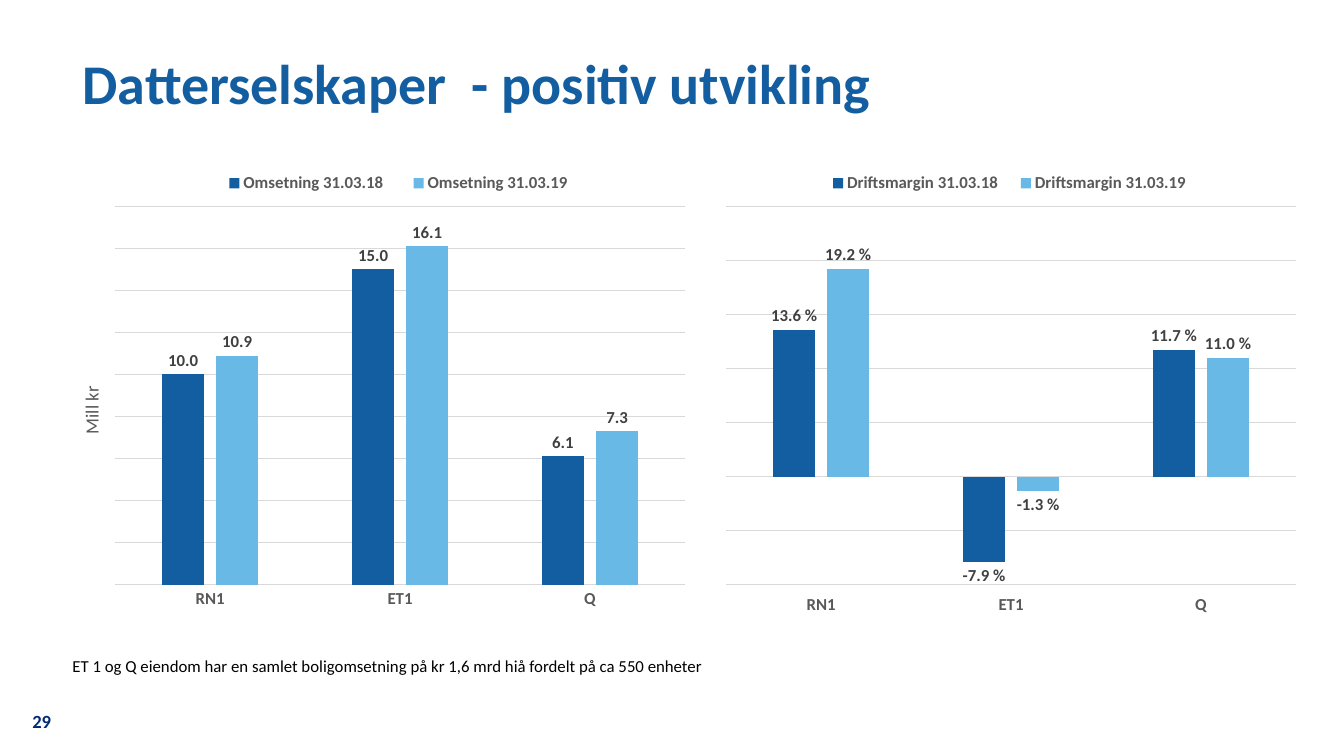
from dataclasses import dataclass

from lxml.etree import SubElement
from pptx import Presentation
from pptx.chart.data import CategoryChartData
from pptx.dml.color import RGBColor
from pptx.enum.chart import (XL_CHART_TYPE, XL_LABEL_POSITION, XL_LEGEND_POSITION,
                             XL_TICK_LABEL_POSITION, XL_TICK_MARK)
from pptx.enum.text import MSO_ANCHOR, MSO_AUTO_SIZE
from pptx.oxml import parse_xml
from pptx.oxml.ns import nsdecls, qn
from pptx.util import Inches, Pt

BLUE, SKY, NAVY, BLACK = "135EA0", "68B9E6", "032A74", "000000"
GREY, DARK_GREY, GRID = "595959", "404040", "D9D9D9"
COMPANIES = ("RN1", "ET1", "Q")


@dataclass
class Label:
    text: str
    box: tuple
    size: float
    color: str
    bold: bool = False
    inset: bool = False
    wrap: bool = True
    anchor: MSO_ANCHOR = MSO_ANCHOR.TOP
    spacing: float = 1.0


@dataclass
class Columns:
    measure: str
    box: tuple
    before: tuple
    now: tuple
    fmt: str
    scale: tuple
    legend_width: float
    low_labels: bool = False
    axis_title: str = ""


LABELS = (
    Label("29", (0.32, 7.04, 0.22, 0.22), 13.3, NAVY, bold=True, wrap=False),
    Label("Datterselskaper  - positiv utvikling", (0.82, 0.6, 11.22, 0.55), 40, BLUE,
          bold=True, anchor=MSO_ANCHOR.MIDDLE, spacing=0.8),
    Label("ET 1 og Q eiendom har en samlet boligomsetning på kr 1,6 mrd hiå "
          "fordelt på ca 550 enheter", (0.62, 6.46, 9.13, 0.3), 12, BLACK, inset=True),
)
CHARTS = (
    Columns("Omsetning", (0.62, 1.58, 6.3, 4.76), (10, 15, 6.1), (10.9, 16.1, 7.3),
            "#,##0.0", (0, 18, 2), 0.61, axis_title="Mill kr"),
    Columns("Driftsmargin", (6.68, 1.58, 6.3, 4.76), (0.136, -0.079, 0.117),
            (0.192, -0.013, 0.11), "0.0\\ %", (-0.1, 0.25, 0.05), 0.61, low_labels=True),
)


def rgb(color: str) -> RGBColor:
    return RGBColor.from_string(color)


def apply(target, values: dict) -> None:
    for name, value in values.items():
        setattr(target, name, value)


def set_font(font, size: float, color: str, bold: bool = False) -> None:
    apply(font, {"name": "Calibri", "size": Pt(size), "bold": bold})
    font.color.rgb = rgb(color)


def set_line(line, color: str) -> None:
    line.color.rgb = rgb(color)
    line.width = Pt(0.75)


def set_layout(element, after: str, inner: bool = False, **fractions: float) -> None:
    """Fix the place of a chart part as fractions of the chart area."""
    for old in element.findall(qn("c:layout")):
        element.remove(old)
    layout = parse_xml(f"<c:layout {nsdecls('c')}><c:manualLayout/></c:layout>")
    manual = layout[0]
    if inner:
        SubElement(manual, qn("c:layoutTarget")).set("val", "inner")
    for axis in "xy":
        SubElement(manual, qn(f"c:{axis}Mode")).set("val", "edge")
    for name, value in fractions.items():
        SubElement(manual, qn(f"c:{name}")).set("val", f"{value:.3f}")
    previous = element.find(qn(after)) if after else None
    if previous is None:
        element.insert(0, layout)
    else:
        previous.addnext(layout)


def add_label(slide, label: Label) -> None:
    s = slide.shapes.add_textbox(*map(Inches, label.box))
    tf = s.text_frame
    apply(tf, {"word_wrap": label.wrap, "vertical_anchor": label.anchor,
               "auto_size": MSO_AUTO_SIZE.SHAPE_TO_FIT_TEXT})
    if not label.inset:
        apply(tf, dict.fromkeys(
            ("margin_left", "margin_top", "margin_right", "margin_bottom"), 0))
    p = tf.paragraphs[0]
    p.line_spacing = label.spacing
    r = p.add_run()
    r.text = label.text
    set_font(r.font, label.size, label.color, label.bold)


def style_axes(chart, columns: Columns) -> None:
    cat, val = chart.category_axis, chart.value_axis
    apply(cat, {"major_tick_mark": XL_TICK_MARK.NONE, "minor_tick_mark": XL_TICK_MARK.NONE})
    if columns.low_labels:
        cat.tick_label_position = XL_TICK_LABEL_POSITION.LOW
    set_font(cat.tick_labels.font, 12, GREY, True)
    set_line(cat.format.line, GRID)

    low, high, step = columns.scale
    apply(val, {"minimum_scale": low, "maximum_scale": high, "major_unit": step,
                "visible": False, "has_major_gridlines": True})
    apply(val.tick_labels, {"number_format": columns.fmt, "number_format_is_linked": False})
    set_line(val.major_gridlines.format.line, GRID)
    if columns.axis_title:
        title = val.axis_title
        tf = title.text_frame
        tf.text = columns.axis_title
        set_font(tf.paragraphs[0].runs[0].font, 13.3, GREY)
        tf._txBody.bodyPr.set("rot", "-5400000")
        tf._txBody.bodyPr.set("vert", "horz")
        set_layout(title._element, "c:tx", x=0.02, y=0.466)


def add_columns(slide, columns: Columns) -> None:
    data = CategoryChartData(number_format=columns.fmt)
    data.categories = COMPANIES
    data.add_series(f"{columns.measure} 31.03.18", columns.before)
    data.add_series(f"{columns.measure} 31.03.19", columns.now)
    chart = slide.shapes.add_chart(XL_CHART_TYPE.COLUMN_CLUSTERED,
                                   *map(Inches, columns.box), data).chart
    set_font(chart.font, 10, BLACK)
    apply(chart, {"has_title": False, "has_legend": True})
    style_axes(chart, columns)

    plot = chart.plots[0]
    apply(plot, {"gap_width": 219, "overlap": -27, "vary_by_categories": False})
    for series, color in zip(plot.series, (BLUE, SKY)):
        series.invert_if_negative = False
        series.format.fill.solid()
        series.format.fill.fore_color.rgb = rgb(color)
        labels = series.data_labels
        apply(labels, {"show_value": True, "position": XL_LABEL_POSITION.OUTSIDE_END,
                       "number_format": columns.fmt, "number_format_is_linked": False})
        set_font(labels.font, 12, DARK_GREY, True)

    legend = chart.legend
    apply(legend, {"position": XL_LEGEND_POSITION.BOTTOM, "include_in_layout": False})
    set_font(legend.font, 12, GREY, True)
    width = columns.legend_width
    set_layout(legend._element, "c:legendPos", x=0.529 - width / 2, y=0.015, w=width, h=0.07)
    plot_area = chart._chartSpace.chart.plotArea
    set_layout(plot_area, "", inner=True, x=0.083, y=0.098, w=0.897, h=0.789)


def main() -> None:
    prs = Presentation()
    apply(prs, {"slide_width": Inches(13.33), "slide_height": Inches(7.5)})
    slide = prs.slides.add_slide(prs.slide_layouts[6])
    for label in LABELS:
        add_label(slide, label)
    for columns in CHARTS:
        add_columns(slide, columns)
    prs.save("out.pptx")


if __name__ == "__main__":
    main()
